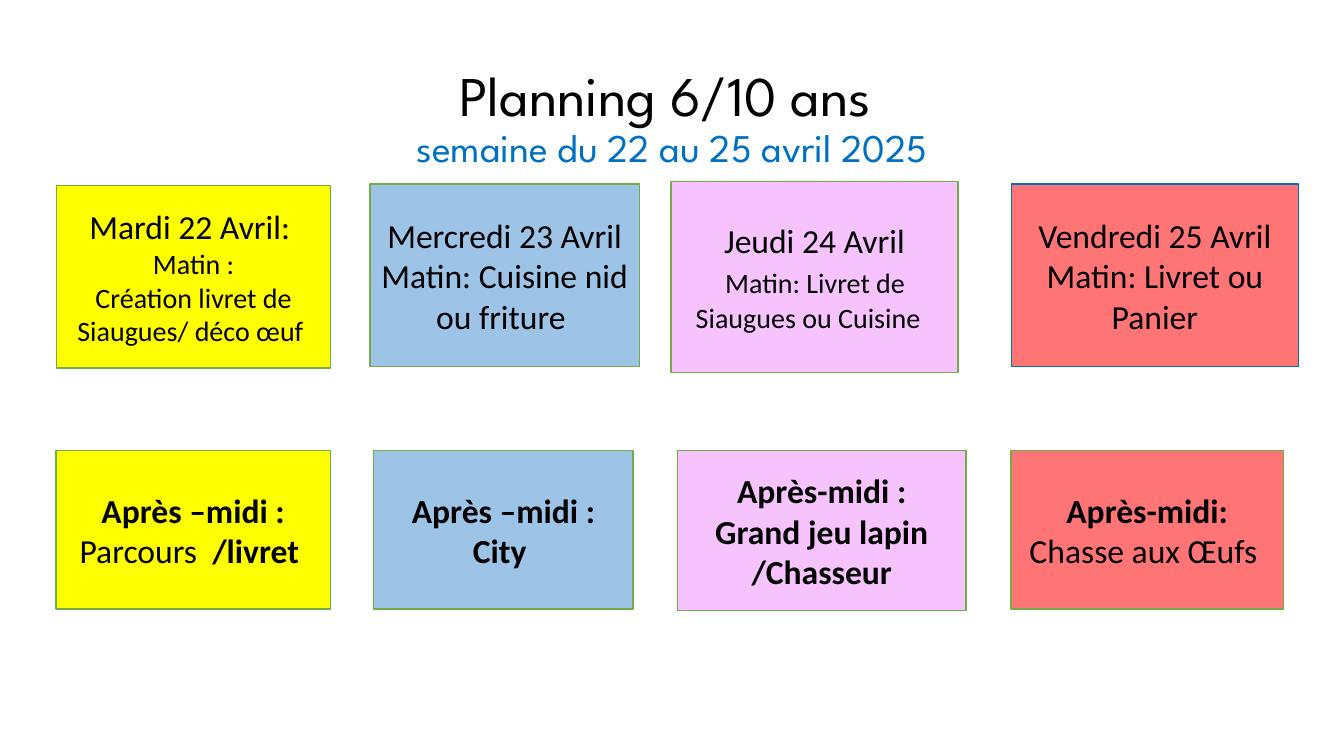
from pptx import Presentation
from pptx.dml.color import RGBColor
from pptx.enum.shapes import MSO_SHAPE
from pptx.enum.text import MSO_ANCHOR, PP_ALIGN
from pptx.util import Pt

COLORS = {
    "text": "000000",
    "blue": "0070C0",
    "green": "70AD47",
    "tuesday": "FFFF00",
    "wednesday": "9DC3E6",
    "thursday": "F6C3FF",
    "friday": "FF7474",
}

# Each card: day, place (left, top, width, height), paragraphs of (text, format) spans
MORNINGS = [
    ("tuesday", (40.3, 132.5, 196, 130.5), [
        [("Mardi 22 Avril: ", {})],
        [("Matin :", {"size": 20})],
        [("Création livret de Siaugues/ déco œuf ", {"size": 20})],
    ]),
    ("wednesday", (264.2, 131.5, 192.5, 130.5), [
        [("Mercredi 23 Avril", {})],
        [("Matin: Cuisine nid ou friture ", {})],
    ]),
    ("thursday", (479.3, 129.6, 205, 136.4), [
        [("Jeudi 24 Avril", {})],
        [(" ", {"bold": True}),
         ("Matin: Livret de  Siaugues ou Cuisine  ", {"size": 20})],
    ]),
    ("friday", (722.3, 131.5, 205.3, 130.5), [
        [("Vendredi 25 Avril Matin: Livret ou Panier", {})],
    ]),
]
AFTERNOONS = [
    ("tuesday", (40, 322, 196, 113), [
        [("Après –midi :", {"bold": True})],
        [("Parcours ", {}), (" /livret ", {"bold": True})],
    ]),
    ("wednesday", (267, 322, 185.3, 113), [
        [("Après –midi :", {"bold": True})],
        [("City ", {"bold": True})],
    ]),
    ("thursday", (484, 322, 206, 114), [
        [("Après-midi :", {"bold": True})],
        [("Grand jeu lapin /Chasseur", {"bold": True})],
    ]),
    ("friday", (722.3, 322, 194.4, 113), [
        [("Après-midi:", {"bold": True})],
        [("Chasse aux Œufs ", {})],
    ]),
]


def rgb(name):
    return RGBColor.from_string(COLORS[name])


def add_span(para, text, size=24, bold=False, color="text", font="Calibri"):
    span = para.add_run()
    span.text = text
    span.font.size = Pt(size)
    span.font.bold = bold
    span.font.name = font
    span.font.color.rgb = rgb(color)


def add_title(page):
    box = page.shapes.add_textbox(Pt(120), Pt(31), Pt(720), Pt(95))
    box.text_frame.word_wrap = True
    box.text_frame.vertical_anchor = MSO_ANCHOR.BOTTOM
    para = box.text_frame.paragraphs[0]
    para.alignment = PP_ALIGN.CENTER
    para.line_spacing = 0.9
    add_span(para, "Planning 6/10 ans ", size=40, font="League Spartan")
    para.add_line_break()
    add_span(para, "semaine du 22 au 25 avril 2025", size=28, color="blue",
             font="League Spartan")


def add_card(page, day, place, paragraphs, line="green"):
    box = page.shapes.add_shape(MSO_SHAPE.RECTANGLE, *map(Pt, place))
    box.shadow.inherit = False
    box.fill.solid()
    box.fill.fore_color.rgb = rgb(day)
    box.line.color.rgb = rgb(line)
    box.line.width = Pt(1)
    frame = box.text_frame
    frame.word_wrap = True
    frame.vertical_anchor = MSO_ANCHOR.MIDDLE
    for index, spans in enumerate(paragraphs):
        para = frame.add_paragraph() if index else frame.paragraphs[0]
        para.alignment = PP_ALIGN.CENTER
        for text, style in spans:
            add_span(para, text, **style)


def main():
    deck = Presentation()
    deck.slide_width, deck.slide_height = Pt(960), Pt(540)
    page = deck.slides.add_slide(deck.slide_layouts[6])

    add_title(page)

    # Morning row: Friday has a blue outline
    for day, place, paragraphs in MORNINGS:
        add_card(page, day, place, paragraphs,
                 line="blue" if day == "friday" else "green")

    # Afternoon row
    for day, place, paragraphs in AFTERNOONS:
        add_card(page, day, place, paragraphs)

    deck.save("out.pptx")


if __name__ == "__main__":
    main()
